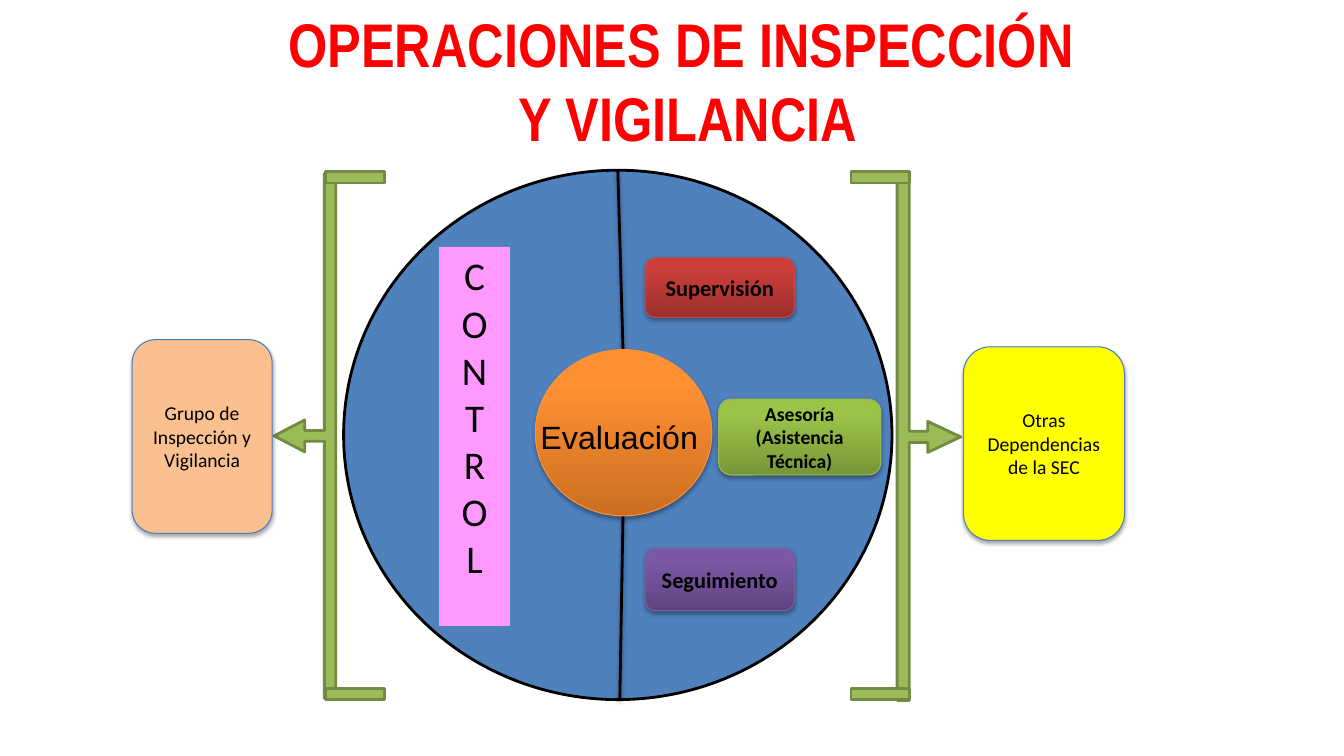
from lxml import etree
from pptx import Presentation
from pptx import util as u
from pptx.dml.color import RGBColor
from pptx.enum import shapes, text
from pptx.oxml import ns

theme = {
    "black": "000000", "title": "FF0000", "disc": "4F81BD", "control": "FF99FF",
    "bracket": "9BBB59", "bracket_line": "738A42",
    "group": "FAC090", "others": "FFFF00", "box_line": "4B7EBC",
    "hub": ("CC6E20", "FF9034"), "hub_line": "F69240",
    "advice": ("779737", "9BC348"), "advice_line": "98B955",
    "tracking": ("5F4480", "7B58A6"), "tracking_line": "7D60A0",
    "supervision": ("9C2F2D", "CB3E3A"), "supervision_line": "BF4C48",
    "body": "Calibri", "hub_font": "Arial", "title_font": "Arial Narrow",
    "small": 14, "label": 16, "hub_size": 23, "control_size": 28, "title_size": 44,
    "thin": 0.75, "thick": 2,
}


def write(s, lines, size, font=theme["body"], color=theme["black"], bold=False,
          anchor=text.MSO_ANCHOR.TOP):
    tf = s.text_frame
    tf.word_wrap = True
    tf.vertical_anchor = anchor
    for i, line in enumerate(lines):
        p = tf.add_paragraph() if i else tf.paragraphs[0]
        p.alignment = text.PP_ALIGN.CENTER
        r = p.add_run()
        r.text = line
        r.font.size = u.Pt(size)
        r.font.name = font
        r.font.bold = bold
        r.font.color.rgb = RGBColor.from_string(color)


def add_shadow(s, alpha, dist):
    spPr = s._element.spPr
    effects = spPr.find(ns.qn("a:effectLst"))
    if effects is None:
        effects = etree.SubElement(spPr, ns.qn("a:effectLst"))
    outer = etree.SubElement(effects, ns.qn("a:outerShdw"), blurRad="40000",
                             dist=str(dist), dir="5400000", rotWithShape="0")
    color = etree.SubElement(outer, ns.qn("a:srgbClr"), val=theme["black"])
    etree.SubElement(color, ns.qn("a:alpha"), val=str(alpha * 1000))


prs = Presentation()
prs.slide_width, prs.slide_height = u.Cm(33.87), u.Cm(19.05)
slide = prs.slides.add_slide(prs.slide_layouts[6])
kinds = shapes.MSO_SHAPE

disc = slide.shapes.add_shape(kinds.OVAL, u.Cm(8.66), u.Cm(4.29), u.Cm(13.82), u.Cm(13.34))
disc.shadow.inherit = False
disc.fill.solid()
disc.fill.fore_color.rgb = RGBColor.from_string(theme["disc"])
disc.line.color.rgb = RGBColor.from_string(theme["black"])
disc.line.width = u.Pt(theme["thick"])

control = slide.shapes.add_shape(kinds.RECTANGLE, u.Cm(11.07), u.Cm(6.22), u.Cm(1.78), u.Cm(9.55))
control.shadow.inherit = False
control.fill.solid()
control.fill.fore_color.rgb = RGBColor.from_string(theme["control"])
control.line.fill.background()
write(control, "CONTROL", theme["control_size"])

for x1, y1, x2, y2 in [(15.57, 4.29, 15.7, 8.81), (15.7, 12.98, 15.62, 17.63)]:
    divider = slide.shapes.add_connector(shapes.MSO_CONNECTOR.STRAIGHT,
                                         u.Cm(x1), u.Cm(y1), u.Cm(x2), u.Cm(y2))
    divider.line.color.rgb = RGBColor.from_string(theme["black"])
    divider.line.width = u.Pt(theme["thick"])
    add_shadow(divider, 38, 20000)

brackets = [
    (kinds.LEFT_ARROW_CALLOUT, 6.91, 4.37, 1.55, 13.23, (0.176, 0.26, 0.497, 0.183)),
    (kinds.RIGHT_ARROW_CALLOUT, 22.61, 4.37, 1.6, 13.28, (0.178, 0.245, 0.519, 0.191)),
]
for y in (16.88, 3.86):
    for x in (21.18, 7.94):
        brackets.append((kinds.MATH_MINUS, x, y, 2.01, 1.22, ()))
for kind, x, y, w, h, adjustments in brackets:
    s = slide.shapes.add_shape(kind, u.Cm(x), u.Cm(y), u.Cm(w), u.Cm(h))
    s.shadow.inherit = False
    for i, value in enumerate(adjustments):
        s.adjustments[i] = value
    s.fill.solid()
    s.fill.fore_color.rgb = RGBColor.from_string(theme["bracket"])
    s.line.color.rgb = RGBColor.from_string(theme["bracket_line"])
    s.line.width = u.Pt(theme["thick"])

small, label = theme["small"], theme["label"]
boxes = [
    (kinds.OVAL, 13.49, 8.81, 4.45, 4.19, "hub", "hub_line", "", label, False),
    (kinds.ROUNDED_RECTANGLE, 3.33, 8.56, 3.53, 4.88, "group", "box_line",
     "Grupo de Inspección y Vigilancia", small, False),
    (kinds.ROUNDED_RECTANGLE, 24.28, 8.74, 4.06, 4.88, "others", "box_line",
     "Otras Dependencias de la SEC", small, False),
    (kinds.ROUNDED_RECTANGLE, 18.11, 10.06, 4.09, 1.91, "advice", "advice_line",
     "Asesoría (Asistencia Técnica)", small, True),
    (kinds.ROUNDED_RECTANGLE, 16.26, 13.82, 3.76, 1.57, "tracking", "tracking_line",
     "Seguimiento", label, True),
    (kinds.ROUNDED_RECTANGLE, 16.26, 6.5, 3.76, 1.5, "supervision", "supervision_line",
     "Supervisión", label, True),
]
for kind, x, y, w, h, fill, line, caption, size, bold in boxes:
    s = slide.shapes.add_shape(kind, u.Cm(x), u.Cm(y), u.Cm(w), u.Cm(h))
    s.shadow.inherit = False
    if isinstance(theme[fill], tuple):
        s.fill.gradient()
        s.fill.gradient_angle = 90
        for stop, color, position in zip(s.fill.gradient_stops, theme[fill], (0, 0.8)):
            stop.color.rgb = RGBColor.from_string(color)
            stop.position = position
    else:
        s.fill.solid()
        s.fill.fore_color.rgb = RGBColor.from_string(theme[fill])
    s.line.color.rgb = RGBColor.from_string(theme[line])
    s.line.width = u.Pt(theme["thin"])
    add_shadow(s, 35, 23000)
    if caption:
        write(s, [caption], size, bold=bold, anchor=text.MSO_ANCHOR.MIDDLE)

hub_label = slide.shapes.add_textbox(u.Cm(12.7), u.Cm(10.39), u.Cm(5.82), u.Cm(1.75))
write(hub_label, ["Evaluación"], theme["hub_size"], theme["hub_font"])

title = slide.shapes.add_textbox(u.Cm(1.3), u.Cm(0.03), u.Cm(31.75), u.Cm(3.66))
write(title, ["OPERACIONES DE INSPECCIÓN", " Y VIGILANCIA"], theme["title_size"],
      theme["title_font"], theme["title"], True)

prs.save("out.pptx")
